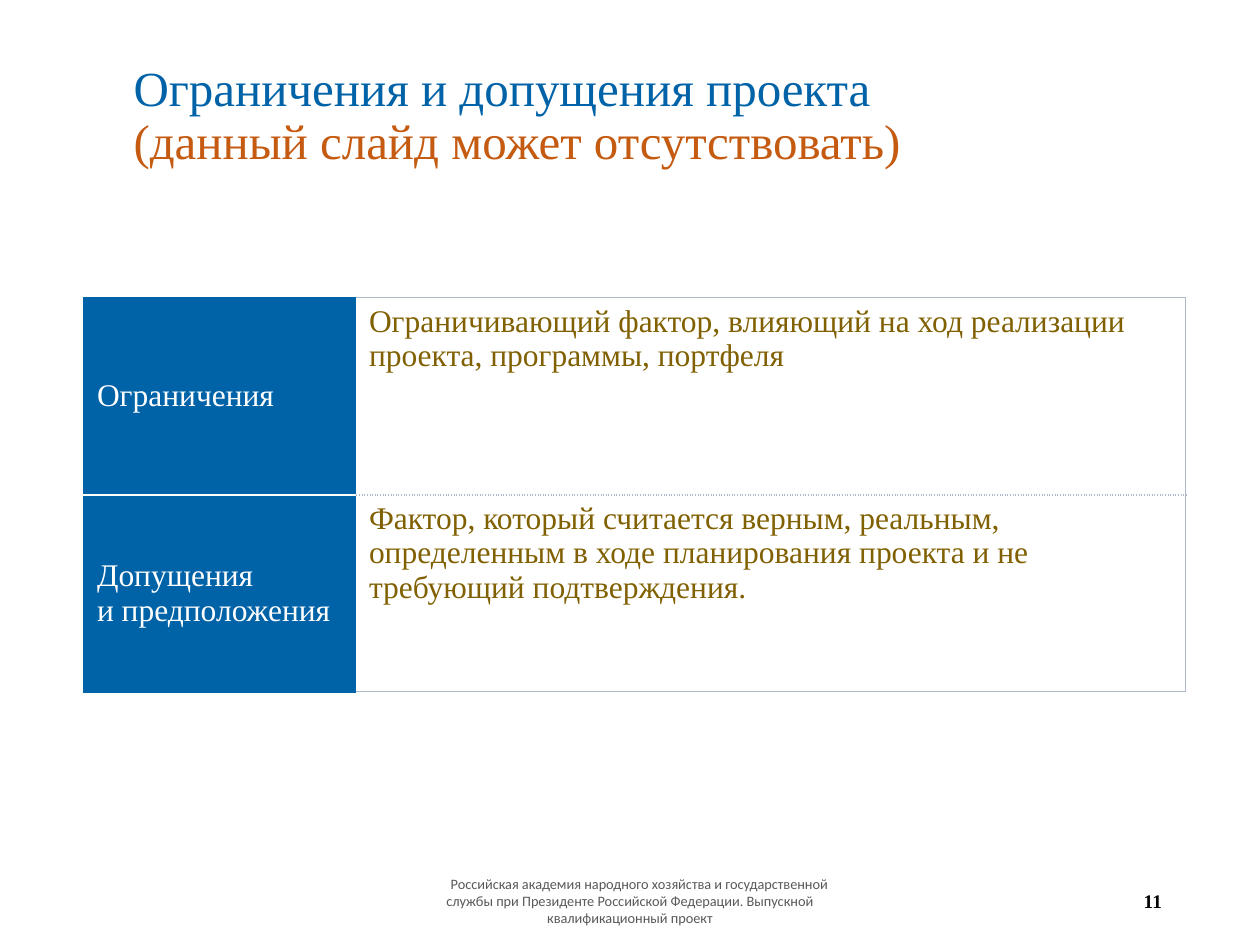
from dataclasses import dataclass

from lxml import etree
from pptx import Presentation
from pptx import util as u
from pptx.dml.color import RGBColor
from pptx.enum import text
from pptx.oxml import ns


@dataclass(frozen=True)
class Theme:
    serif: str = "Times New Roman"
    sans: str = "Calibri"
    blue: str = "0062A7"
    orange: str = "C55A11"
    olive: str = "806000"
    rule: str = "B0B9CB"
    white: str = "FFFFFF"
    black: str = "000000"
    gray: str = "595959"
    title_size: float = 28
    table_size: float = 18
    number_size: float = 11
    footer_size: float = 8.2


THEME = Theme()
WIDTH, HEIGHT = u.Inches(10), u.Inches(7.5)

TITLE_BOX = (0.096, 0.056, 0.734, 0.135)
TABLE_BOX = (0.067, 0.315, 0.874, 0.417)
FOOTER_BOX = (0.331, 0.927, 0.338, 0.053)
NUMBER_BOX = (0.707, 0.927, 0.225, 0.053)
LABEL_SHARE = 0.247

FACTORS = [
    ("Ограничения",
     "Ограничивающий фактор, влияющий на ход реализации проекта, программы, портфеля"),
    ("Допущения\nи предположения",
     "Фактор, который считается верным, реальным, определенным в ходе "
     "планирования проекта и не требующий подтверждения."),
]


def to_emu(box):
    """Turn shares of the slide into lengths."""
    left, top, width, height = box
    return (int(left * WIDTH), int(top * HEIGHT),
            int(width * WIDTH), int(height * HEIGHT))


def style(paragraph, font, size, color, bold=False):
    for run in paragraph.runs:
        run.font.name = font
        run.font.size = u.Pt(size)
        run.font.bold = bold
        run.font.color.rgb = RGBColor.from_string(color)


def add_title(slide, box):
    title = slide.shapes.title
    title.left, title.top, title.width, title.height = to_emu(box)
    frame = title.text_frame
    frame.text = "Ограничения и допущения проекта\n(данный слайд может отсутствовать)"
    frame.word_wrap = True
    frame.auto_size = text.MSO_AUTO_SIZE.NONE
    frame.vertical_anchor = text.MSO_ANCHOR.MIDDLE
    for paragraph, color in zip(frame.paragraphs, (THEME.blue, THEME.orange)):
        paragraph.alignment = text.PP_ALIGN.LEFT
        paragraph.line_spacing = 0.9
        style(paragraph, THEME.serif, THEME.title_size, color)


def set_borders(cell, **edges):
    """Draw the named edges (L, R, T, B) as (color, points, dash); hide the rest."""
    properties = cell._tc.get_or_add_tcPr()
    for position, side in enumerate("LRTB"):
        line = etree.Element(ns.qn(f"a:ln{side}"))
        properties.insert(position, line)
        if side not in edges:
            line.set("w", "0")
            etree.SubElement(line, ns.qn("a:noFill"))
            continue
        color, points, dash = edges[side]
        line.set("w", str(u.Pt(points)))
        fill = etree.SubElement(line, ns.qn("a:solidFill"))
        etree.SubElement(fill, ns.qn("a:srgbClr"), val=color)
        etree.SubElement(line, ns.qn("a:prstDash"), val=dash)


def fill_cell(cell, wording, background, color, anchor):
    cell.text_frame.text = wording
    cell.vertical_anchor = anchor
    cell.fill.solid()
    cell.fill.fore_color.rgb = RGBColor.from_string(background)
    for paragraph in cell.text_frame.paragraphs:
        style(paragraph, THEME.serif, THEME.table_size, color)


def add_factor_table(slide, box):
    left, top, width, height = to_emu(box)
    table = slide.shapes.add_table(len(FACTORS), 2, left, top, width, height).table
    table.first_row = table.horz_banding = False
    table.columns[0].width = int(width * LABEL_SHARE)
    table.columns[1].width = width - table.columns[0].width

    frame = (THEME.blue, 1.5, "solid")
    label_divider = (THEME.white, 1.5, "solid")
    outline = (THEME.rule, 1, "solid")
    divider = (THEME.rule, 1.5, "sysDot")
    last = len(FACTORS) - 1
    for row, (label, meaning) in enumerate(FACTORS):
        label_cell, meaning_cell = table.cell(row, 0), table.cell(row, 1)
        fill_cell(label_cell, label, THEME.blue, THEME.white, text.MSO_ANCHOR.MIDDLE)
        fill_cell(meaning_cell, meaning, THEME.white, THEME.olive, text.MSO_ANCHOR.TOP)
        set_borders(label_cell, L=frame,
                    T=frame if row == 0 else label_divider,
                    B=frame if row == last else label_divider)
        set_borders(meaning_cell, R=outline,
                    T=outline if row == 0 else divider,
                    B=outline if row == last else divider)


def add_note(slide, box, wording, alignment, font, size, color, bold=False):
    frame = slide.shapes.add_textbox(*to_emu(box)).text_frame
    frame.word_wrap = True
    frame.vertical_anchor = text.MSO_ANCHOR.MIDDLE
    frame.text = wording
    paragraph = frame.paragraphs[0]
    paragraph.alignment = alignment
    style(paragraph, font, size, color, bold)
    return paragraph


def add_footer(slide, footer_box, number_box):
    footer = add_note(
        slide, footer_box,
        "Российская академия народного хозяйства и государственной службы при "
        "Президенте Российской Федерации. Выпускной квалификационный проект",
        text.PP_ALIGN.CENTER, THEME.sans, THEME.footer_size, THEME.gray)
    footer._p.get_or_add_pPr().set("indent", str(u.Inches(0.15)))
    add_note(slide, number_box, "11", text.PP_ALIGN.RIGHT,
             THEME.serif, THEME.number_size, THEME.black, bold=True)


def main():
    deck = Presentation()
    deck.slide_width, deck.slide_height = WIDTH, HEIGHT
    slide = deck.slides.add_slide(deck.slide_layouts[5])
    add_title(slide, TITLE_BOX)
    add_factor_table(slide, TABLE_BOX)
    add_footer(slide, FOOTER_BOX, NUMBER_BOX)
    deck.save("out.pptx")


if __name__ == "__main__":
    main()
